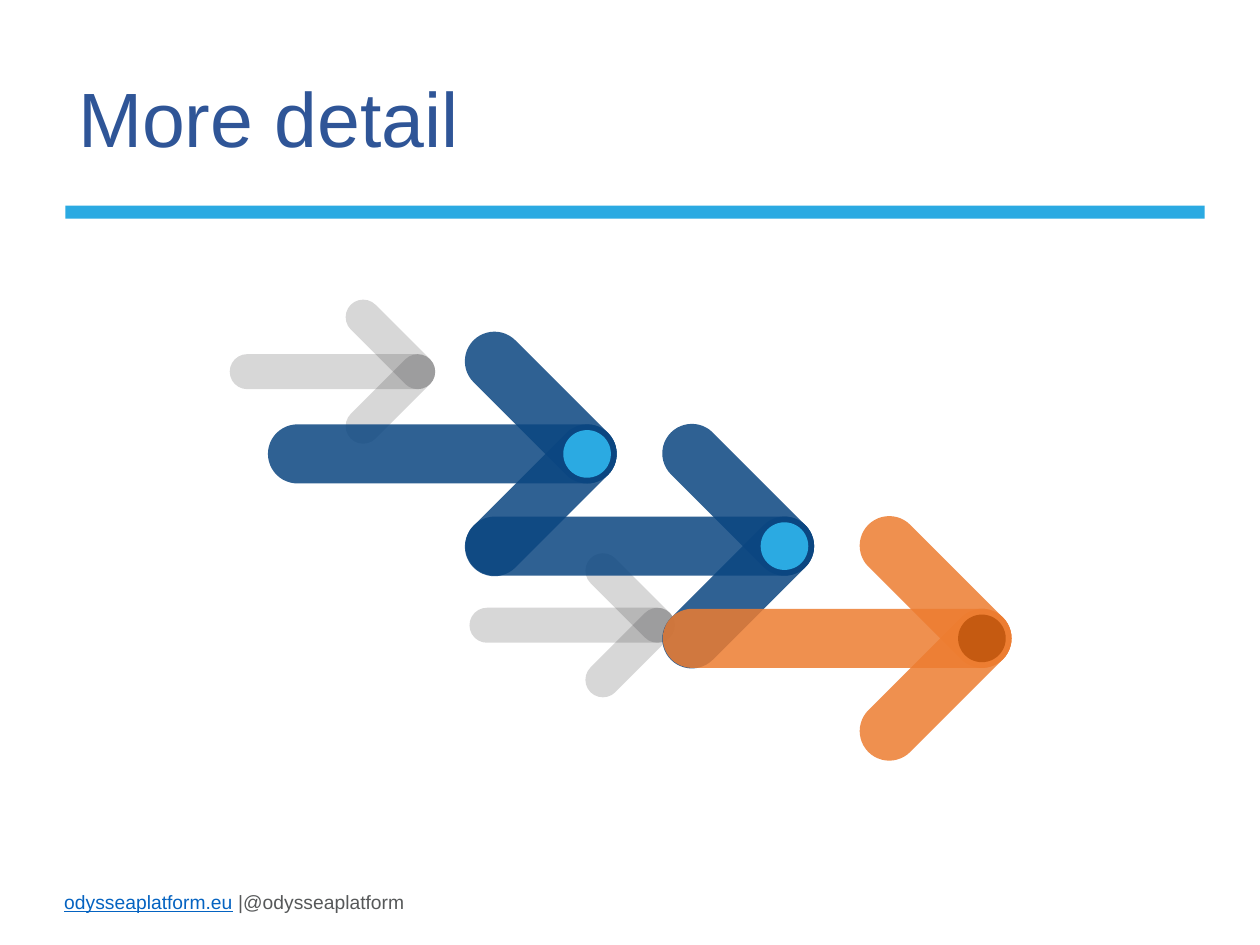
"""Builds the "More detail" slide with its cascade of jointed arrows."""
from dataclasses import dataclass
from math import cos, pi
from typing import Any, Optional

from lxml import etree
from pptx import Presentation
from pptx.dml.color import RGBColor
from pptx.enum import shapes, text
from pptx.oxml.ns import qn
from pptx.util import Pt

FONT = "Arial"
COLOURS = {
    "title": "2F5597",
    "sky": "2BAAE2",
    "navy": "0B4681",
    "orange": "ED7D31",
    "rust": "C55A11",
    "grey": "39383A",
    "link": "0563C1",
    "footer": "565859",
}


@dataclass(frozen=True)
class Size:
    shaft: float
    arm: float
    thickness: float
    dot: float
    opacity: int


@dataclass(frozen=True)
class Arrow:
    x: float
    y: float
    size: Size
    colour: str
    dot: Optional[str] = None


SMALL = Size(shaft=117.4, arm=64.1, thickness=20, dot=0, opacity=20)
LARGE = Size(shaft=199.3, arm=108.7, thickness=33.8, dot=27.2, opacity=85)
START_X, START_Y, STEP_X, STEP_Y = 335.5, 259.4, 112.8, 52.7
CASCADE = [("navy", "sky"), ("navy", "sky"), ("orange", "rust")]
ARROWS = [Arrow(375.7, 357.3, SMALL, "grey"), Arrow(238.7, 212.4, SMALL, "grey")] + [
    Arrow(START_X + i * STEP_X, START_Y + i * STEP_Y, LARGE, colour, dot)
    for i, (colour, dot) in enumerate(CASCADE)
]


def add_centred(parent: Any, kind: Any, x: float, y: float, width: float,
                height: float, colour: str, opacity: int = 100) -> Any:
    """Add a plain filled shape centred on a point."""
    shape = parent.shapes.add_shape(
        kind, Pt(x - width / 2), Pt(y - height / 2), Pt(width), Pt(height))
    shape.shadow.inherit = False
    shape.fill.solid()
    shape.fill.fore_color.rgb = RGBColor.from_string(COLOURS[colour])
    shape.line.fill.background()
    if opacity < 100:
        tint = shape.fill._xPr.find(qn("a:solidFill"))[0]
        etree.SubElement(tint, qn("a:alpha"), val=str(opacity * 1000))
    return shape


def add_bar(parent: Any, arrow: Arrow, x: float, y: float, length: float,
            angle: float = 0) -> None:
    """Add one round-ended bar of an arrow."""
    bar = add_centred(parent, shapes.MSO_SHAPE.ROUNDED_RECTANGLE, x, y, length,
                      arrow.size.thickness, arrow.colour, arrow.size.opacity)
    bar.adjustments[0] = 0.5
    bar.rotation = angle


def add_arrow(page: Any, arrow: Arrow) -> None:
    """Add two arms and a shaft that meet at the joint, with its dot."""
    group = page.shapes.add_group_shape()
    size = arrow.size
    reach = (size.arm - size.thickness) / 2 * cos(pi / 4)
    for side, angle in ((-1, 45), (1, 135)):
        add_bar(group, arrow, arrow.x - reach, arrow.y + side * reach, size.arm, angle)
    add_bar(group, arrow, arrow.x - (size.shaft - size.thickness) / 2, arrow.y, size.shaft)
    if arrow.dot:
        add_centred(group, shapes.MSO_SHAPE.OVAL, arrow.x, arrow.y,
                    size.dot, size.dot, arrow.dot)


def style_span(span: Any, size: float, colour: str, underline: bool = False) -> None:
    """Format one run of text."""
    span.font.name = FONT
    span.font.size = Pt(size)
    span.font.underline = underline
    span.font.color.rgb = RGBColor.from_string(COLOURS[colour])


def add_title(page: Any) -> None:
    """Fill and place the title placeholder."""
    title = page.shapes.title
    title.left, title.top, title.width, title.height = Pt(37.4), Pt(28.8), Pt(543.6), Pt(82)
    frame = title.text_frame
    frame.text = "More detail"
    frame.vertical_anchor = text.MSO_ANCHOR.MIDDLE
    para = frame.paragraphs[0]
    para.alignment = text.PP_ALIGN.LEFT
    para.line_spacing = 0.9
    style_span(para.runs[0], 44, "title")


def add_footer(page: Any) -> None:
    """Add the web address and handle at the foot of the slide."""
    box = page.shapes.add_textbox(Pt(36.7), Pt(508.3), Pt(343.4), Pt(13.7))
    frame = box.text_frame
    frame.word_wrap = True
    frame.margin_left = frame.margin_top = frame.margin_right = frame.margin_bottom = 0
    frame.vertical_anchor = text.MSO_ANCHOR.MIDDLE
    para = frame.paragraphs[0]
    for words, colour, underline in (("odysseaplatform.eu", "link", True),
                                     (" |@odysseaplatform", "footer", False)):
        span = para.add_run()
        span.text = words
        style_span(span, 11, colour, underline)


def main() -> None:
    """Build and save the deck."""
    deck = Presentation()
    deck.slide_width, deck.slide_height = Pt(720), Pt(540)
    page = deck.slides.add_slide(deck.slide_layouts[5])
    add_centred(page, shapes.MSO_SHAPE.RECTANGLE, 362.9, 121.2, 651, 7.5, "sky")
    add_footer(page)
    add_title(page)
    for arrow in ARROWS:
        add_arrow(page, arrow)
    deck.save("out.pptx")


if __name__ == "__main__":
    main()
